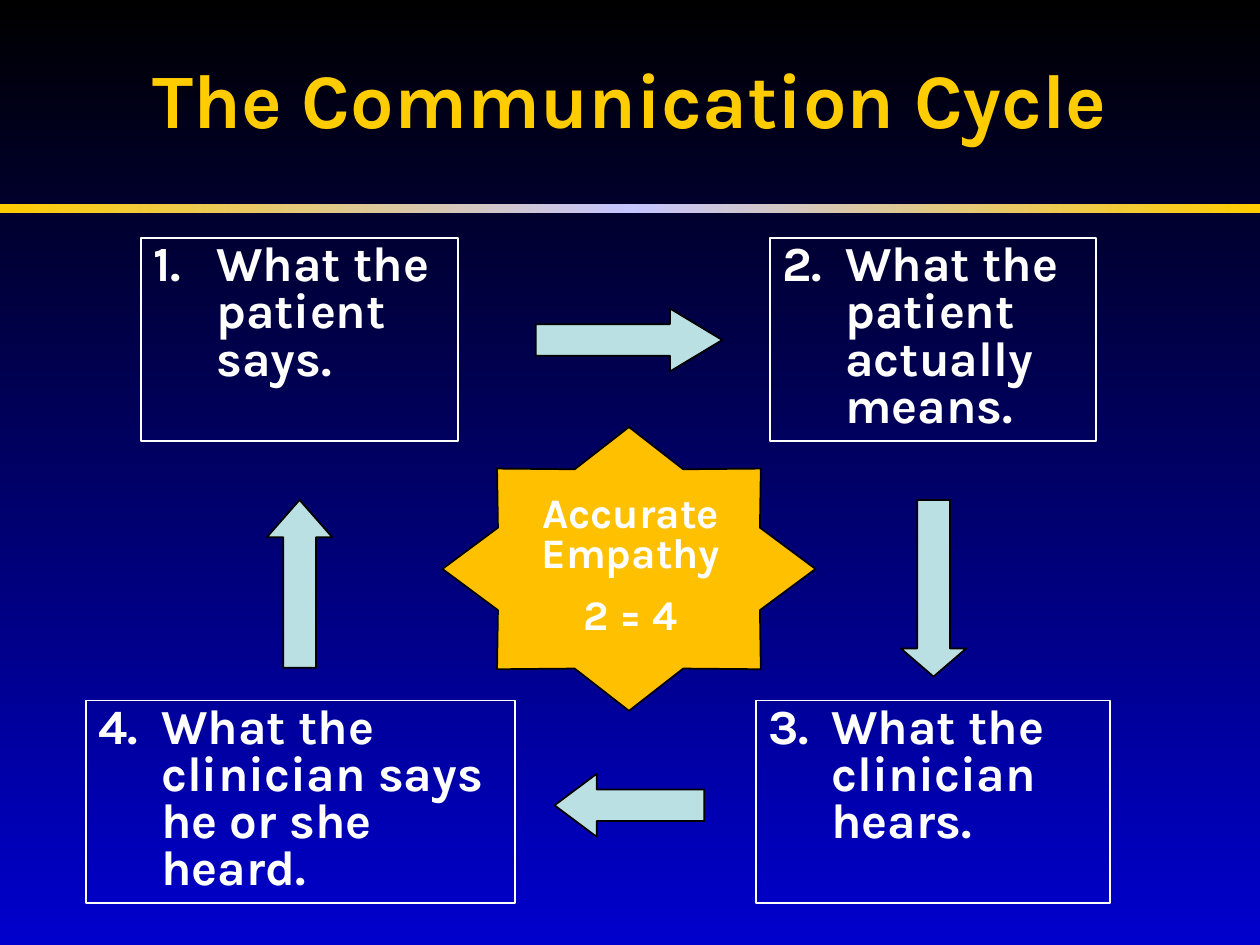
from copy import deepcopy

from lxml.etree import SubElement
from pptx import Presentation
from pptx.dml.color import RGBColor
from pptx.enum.shapes import MSO_SHAPE
from pptx.enum.text import MSO_ANCHOR, PP_ALIGN
from pptx.oxml.ns import qn
from pptx.util import Cm, Pt


def color(value):
    return RGBColor.from_string(value)


def add_text(paragraph, text, size, text_color="FFFFFF"):
    run = paragraph.add_run()
    run.text = text
    run.font.name = "Karla"
    run.font.size = Pt(size)
    run.font.bold = True
    run.font.color.rgb = color(text_color)


presentation = Presentation()
presentation.slide_width = Cm(25.4)
presentation.slide_height = Cm(19.05)
slide = presentation.slides.add_slide(presentation.slide_layouts[5])

background = slide.background.fill
background.gradient()
background.gradient_angle = 270
for stop, value in zip(background.gradient_stops, ("000000", "0000CC")):
    stop.color.rgb = color(value)

band = slide.shapes.add_shape(MSO_SHAPE.RECTANGLE, Cm(0), Cm(4.11), Cm(25.4), Cm(0.18))
band.shadow.inherit = False
band.line.fill.background()
band.fill.gradient()
band.fill.gradient_angle = 0
stop_list = band._element.spPr.find(".//" + qn("a:gsLst"))
stop_list.append(deepcopy(stop_list[0]))
band_stops = ((0, "FFCC00"), (0.5, "C5C5FF"), (1, "FFCC00"))
for stop, (position, value) in zip(band.fill.gradient_stops, band_stops):
    stop.position = position
    stop.color.rgb = color(value)

title = slide.shapes.title
title.left, title.top, title.width, title.height = Cm(0.64), Cm(0), Cm(24.13), Cm(3.94)
title.text_frame.vertical_anchor = MSO_ANCHOR.MIDDLE
title_paragraph = title.text_frame.paragraphs[0]
title_paragraph.alignment = PP_ALIGN.CENTER
add_text(title_paragraph, "The Communication Cycle", 44, "FFCC00")

steps = [
    (2.84, 4.8, 6.4, "What the patient says."),
    (15.52, 4.8, 6.58, "What the patient actually means."),
    (15.24, 14.12, 7.14, "What the clinician hears."),
    (1.73, 14.12, 8.66, "What the clinician says he or she heard."),
]
for number, (left, top, width, text) in enumerate(steps, 1):
    box = slide.shapes.add_textbox(Cm(left), Cm(top), Cm(width), Cm(4.09))
    box.line.color.rgb = color("FFFFFF")
    box.line.width = Pt(1)
    box.text_frame.word_wrap = True
    paragraph = box.text_frame.paragraphs[0]
    properties = paragraph._p.get_or_add_pPr()
    properties.set("marL", str(Cm(1.27)))
    properties.set("indent", str(-Cm(1.27)))
    SubElement(properties, qn("a:buFont"), typeface="+mj-lt")
    SubElement(properties, qn("a:buAutoNum"), type="arabicPeriod", startAt=str(number))
    paragraph.line_spacing = 0.8
    add_text(paragraph, text, 28)

cycle_shapes = [
    (MSO_SHAPE.RIGHT_ARROW, 10.8, 6.22, 3.76, 1.27, (0.5, 0.83), "BBE0E3"),
    (MSO_SHAPE.DOWN_ARROW, 18.16, 10.08, 1.32, 3.56, (0.5, 0.43), "BBE0E3"),
    (MSO_SHAPE.LEFT_ARROW, 11.18, 15.6, 3.02, 1.27, (0.5, 0.67), "BBE0E3"),
    (MSO_SHAPE.UP_ARROW, 5.38, 10.08, 1.32, 3.38, (0.5, 0.57), "BBE0E3"),
    (MSO_SHAPE.STAR_8_POINT, 8.92, 8.61, 7.52, 5.72, (0.38,), "FFC000"),
]
for kind, left, top, width, height, adjustments, fill_color in cycle_shapes:
    shape = slide.shapes.add_shape(kind, Cm(left), Cm(top), Cm(width), Cm(height))
    shape.shadow.inherit = False
    shape.fill.solid()
    shape.fill.fore_color.rgb = color(fill_color)
    shape.line.color.rgb = color("000000")
    shape.line.width = Pt(1)
    for index, adjustment in enumerate(adjustments):
        shape.adjustments[index] = adjustment

center = slide.shapes.add_textbox(Cm(10.16), Cm(9.88), Cm(5.11), Cm(3.23))
center.text_frame.word_wrap = True
empathy = center.text_frame.paragraphs[0]
equation = center.text_frame.add_paragraph()
equation.space_before = Pt(12)
for paragraph, text in ((empathy, "Accurate Empathy"), (equation, "2 = 4")):
    paragraph.alignment = PP_ALIGN.CENTER
    paragraph.line_spacing = 0.8
    add_text(paragraph, text, 24)

presentation.save("out.pptx")
